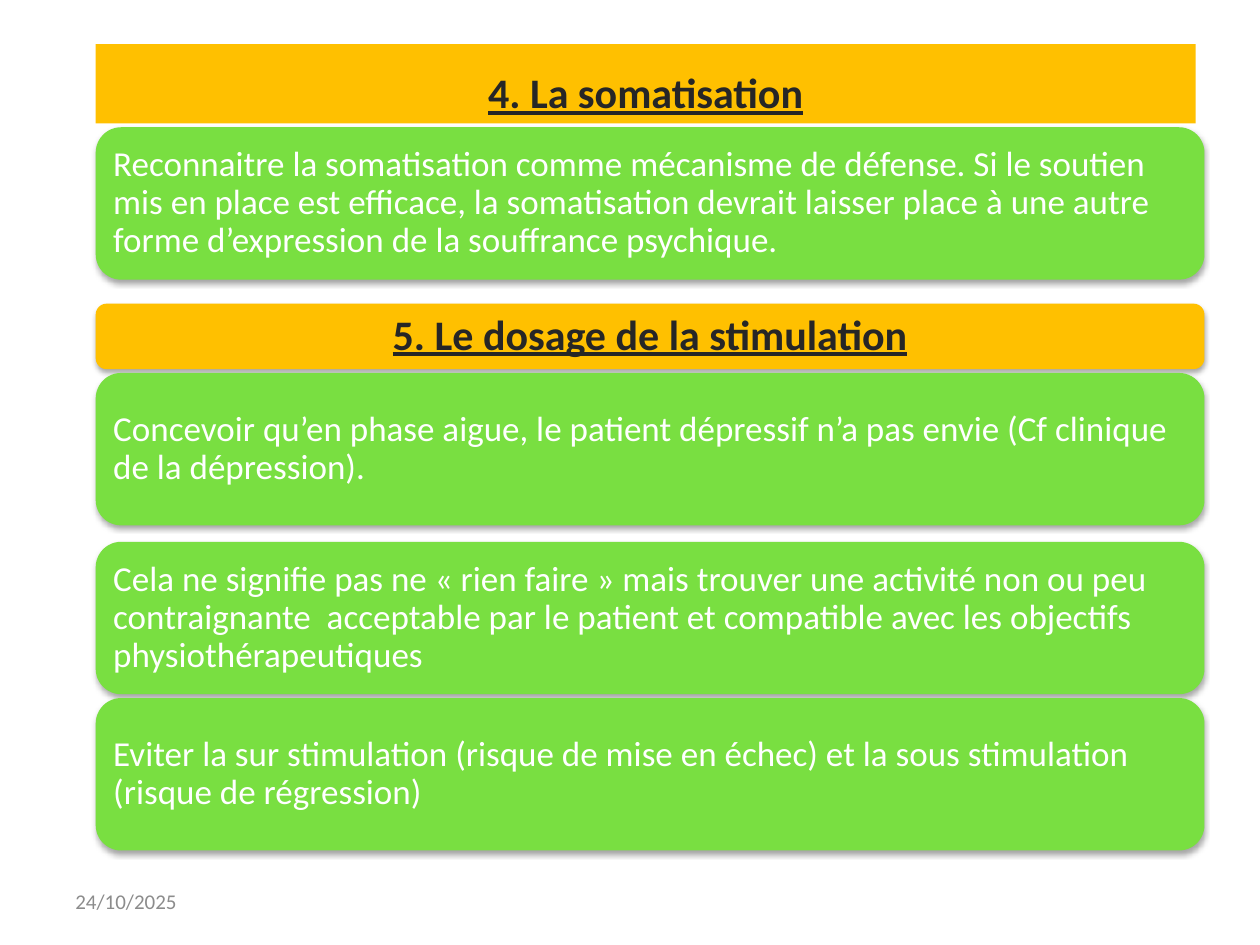
from lxml import etree
from pptx import Presentation
from pptx.dml.color import RGBColor
from pptx.enum.shapes import MSO_SHAPE as SHAPE
from pptx.enum.text import MSO_ANCHOR as ANCHOR, PP_ALIGN as ALIGN
from pptx.oxml import parse_xml
from pptx.oxml.ns import nsdecls
from pptx.util import Inches, Pt

AMBER = RGBColor(0xFF, 0xC0, 0x00)
GREEN = RGBColor(0x79, 0xDF, 0x41)
DARK = RGBColor(0x26, 0x26, 0x26)
GREY = RGBColor(0x8C, 0x8C, 0x8C)
WHITE = RGBColor(0xFF, 0xFF, 0xFF)

LEFT, WIDTH, CARD_HEIGHT = 0.76, 8.8, 1.21

CARDS = [
    (1.01, "Reconnaitre la somatisation comme mécanisme de défense. Si le soutien "
           "mis en place est efficace, la somatisation devrait laisser place à une "
           "autre forme d’expression de la souffrance psychique."),
    (2.96, "Concevoir qu’en phase aigue, le patient dépressif n’a pas envie "
           "(Cf clinique de la dépression)."),
    (4.3, "Cela ne signifie pas ne « rien faire » mais trouver une activité non ou "
          "peu contraignante  acceptable par le patient et compatible avec les "
          "objectifs physiothérapeutiques"),
    (5.54, "Eviter la sur stimulation (risque de mise en échec) et la sous "
           "stimulation (risque de régression)"),
]


def add_shadow(s):
    """Give a shape a soft shadow that falls straight down."""
    s.shadow.inherit = False
    effects = s._element.spPr.find("{*}effectLst")
    effects.append(parse_xml(
        f'<a:outerShdw {nsdecls("a")} blurRad="{Pt(3.1)}" dist="{Pt(1.8)}" '
        'dir="5400000" rotWithShape="0"><a:srgbClr val="000000">'
        '<a:alpha val="35000"/></a:srgbClr></a:outerShdw>'))


def write_text(s, text, size, color, align=ALIGN.LEFT, anchor=ANCHOR.MIDDLE, heading=False):
    """Fill a shape with one styled paragraph and return the paragraph."""
    tf = s.text_frame
    tf.word_wrap = True
    tf.vertical_anchor = anchor
    p = tf.paragraphs[0]
    p.text = text
    p.alignment = align
    p.font.name = "Calibri"
    p.font.size = Pt(size)
    p.font.color.rgb = color
    p.font.bold = p.font.underline = heading
    return p


def add_panel(slide, kind, box, fill):
    """Add a filled shape without outline or shadow."""
    s = slide.shapes.add_shape(kind, *map(Inches, box))
    s.fill.solid()
    s.fill.fore_color.rgb = fill
    s.line.fill.background()
    s.shadow.inherit = False
    return s


def add_title(slide, box, text):
    """Add the square title band with its text at the bottom."""
    s = add_panel(slide, SHAPE.RECTANGLE, box, AMBER)
    write_text(s, text, 24, DARK, ALIGN.CENTER, ANCHOR.BOTTOM, True)


def add_card(slide, box, text, heading=False):
    """Add a rounded card, either a section heading or a body text."""
    s = add_panel(slide, SHAPE.ROUNDED_RECTANGLE, box, AMBER if heading else GREEN)
    add_shadow(s)
    tf = s.text_frame
    inset = Inches(0.1 if heading else 0.08)
    tf.margin_left = tf.margin_right = tf.margin_top = tf.margin_bottom = inset
    if heading:
        p = write_text(s, text, 24, DARK, ALIGN.CENTER, heading=True)
    else:
        p = write_text(s, text, 20, WHITE)
    p.line_spacing = 0.9


def add_date(slide, box, text):
    """Add the date in the footer."""
    s = slide.shapes.add_textbox(*map(Inches, box))
    write_text(s, text, 12, GREY)


def main():
    """Build the slide and save it."""
    prs = Presentation()
    prs.slide_width, prs.slide_height = Inches(10), Inches(7.5)
    slide = prs.slides.add_slide(prs.slide_layouts[6])
    add_title(slide, (LEFT, 0.35, 8.73, 0.63), "4. La somatisation")
    add_card(slide, (LEFT, 2.41, WIDTH, 0.52), "5. Le dosage de la stimulation", True)
    for top, text in CARDS:
        add_card(slide, (LEFT, top, WIDTH, CARD_HEIGHT), text)
    add_date(slide, (0.5, 6.95, 2.33, 0.4), "24/10/2025")
    prs.save("out.pptx")


if __name__ == "__main__":
    main()
